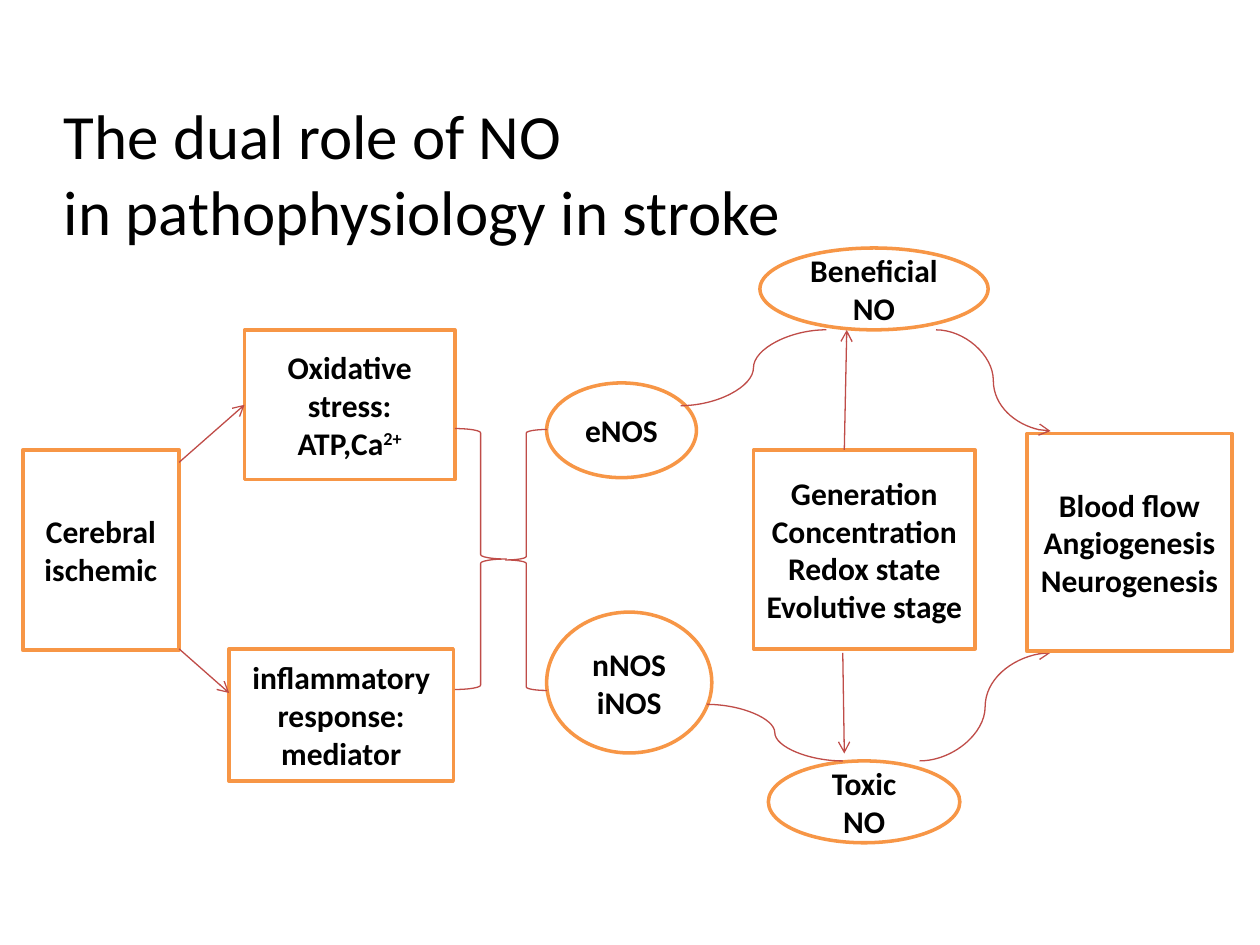
from dataclasses import dataclass
from typing import NamedTuple, Optional

from lxml.etree import SubElement
from pptx import Presentation
from pptx.dml.color import RGBColor
from pptx.enum.shapes import MSO_CONNECTOR, MSO_SHAPE
from pptx.enum.text import MSO_ANCHOR, PP_ALIGN
from pptx.oxml.ns import qn
from pptx.util import Cm, Pt


@dataclass(frozen=True)
class Theme:
    font: str = "Calibri"
    ink: RGBColor = RGBColor(0x00, 0x00, 0x00)
    paper: RGBColor = RGBColor(0xFF, 0xFF, 0xFF)
    border: RGBColor = RGBColor(0xF7, 0x96, 0x46)
    link: RGBColor = RGBColor(0xBF, 0x4C, 0x48)
    title_size: Pt = Pt(36)
    node_size: Pt = Pt(18)
    border_width: Pt = Pt(2)
    link_width: Pt = Pt(0.75)


class Area(NamedTuple):
    left: float
    top: float
    width: float
    height: float

    def lengths(self) -> list:
        return [Cm(value) for value in self]


class Node(NamedTuple):
    name: str
    kind: MSO_SHAPE
    area: Area
    lines: tuple
    superscript: str = ""


class Link(NamedTuple):
    start: tuple
    end: tuple
    curved: bool = False
    arrow: bool = True
    target: Optional[str] = None


THEME = Theme()
RECTANGLE, OVAL = MSO_SHAPE.RECTANGLE, MSO_SHAPE.OVAL

TITLE_AREA = Area(1.04, 2.51, 24.33, 1.93)
TITLE_LINES = ("The dual role of NO", "in pathophysiology in stroke")

NODES = (
    Node("inducible", OVAL, Area(11.02, 12.34, 3.33, 2.84), ("nNOS", "iNOS")),
    Node("conditions", RECTANGLE, Area(15.19, 9.07, 4.47, 4.01),
         ("Generation", "Concentration", "Redox state", "Evolutive stage")),
    Node("inflammation", RECTANGLE, Area(4.62, 13.08, 4.52, 2.67),
         ("inflammatory response:", "mediator")),
    Node("toxic", OVAL, Area(15.49, 15.34, 3.86, 1.65), ("Toxic NO",)),
    Node("beneficial", OVAL, Area(15.32, 5, 4.6, 1.65), ("Beneficial NO",)),
    Node("outcome", RECTANGLE, Area(20.7, 8.74, 4.14, 4.39),
         ("Blood flow", "Angiogenesis", "Neurogenesis")),
    Node("ischemia", RECTANGLE, Area(0.46, 9.07, 3.15, 4.04), ("Cerebral ischemic",)),
    Node("oxidation", RECTANGLE, Area(4.93, 6.65, 4.24, 3.02),
         ("Oxidative stress:", "ATP,Ca"), "2+"),
    Node("endothelial", OVAL, Area(11.02, 7.72, 3.02, 1.91), ("eNOS",)),
)

BRACES = (
    (MSO_SHAPE.RIGHT_BRACE, Area(9.17, 8.64, 1.04, 5.26)),
    (MSO_SHAPE.LEFT_BRACE, Area(10.19, 8.66, 0.84, 5.26)),
)

LINKS_BEHIND = (Link((18.54, 15.34), (21.18, 13.16), curved=True),)
LINKS_IN_FRONT = (
    Link((3.61, 13.08), (4.62, 13.97)),
    Link((3.61, 9.32), (4.93, 8.16), target="oxidation"),
    Link((14.25, 14.2), (16.99, 15.34), curved=True, arrow=False),
    Link((13.72, 8.18), (16.66, 6.65), curved=True, arrow=False),
    Link((18.87, 6.65), (21.18, 8.69), curved=True),
    Link((17.02, 9.07), (17.07, 6.65)),
    Link((16.99, 13.16), (17.02, 15.19)),
)


def add_span(para, text: str, size: Pt, bold: bool = False):
    """Append one styled run to a paragraph."""
    span = para.add_run()
    span.text = text
    span.font.name = THEME.font
    span.font.size = size
    span.font.bold = bold
    span.font.color.rgb = THEME.ink
    return span


def style_line(line, color: RGBColor, width: Pt) -> None:
    """Set the colour and width of a line."""
    line.color.rgb = color
    line.width = width


def add_title(page) -> None:
    """Write the two-line heading."""
    box = page.shapes.add_textbox(*TITLE_AREA.lengths())
    frame = box.text_frame
    frame.word_wrap = True
    frame.vertical_anchor = MSO_ANCHOR.MIDDLE
    para = frame.paragraphs[0]
    for index, text in enumerate(TITLE_LINES):
        if index:
            para.add_line_break()
        add_span(para, text, THEME.title_size)


def add_node(page, node: Node):
    """Draw one outlined box or ellipse with centred bold text."""
    box = page.shapes.add_shape(node.kind, *node.area.lengths())
    box.shadow.inherit = False
    box.fill.solid()
    box.fill.fore_color.rgb = THEME.paper
    style_line(box.line, THEME.border, THEME.border_width)
    frame = box.text_frame
    frame.word_wrap = True
    frame.vertical_anchor = MSO_ANCHOR.MIDDLE
    if node.kind == RECTANGLE:
        frame.margin_left = frame.margin_right = Cm(0.15)
    for index, text in enumerate(node.lines):
        para = frame.add_paragraph() if index else frame.paragraphs[0]
        para.alignment = PP_ALIGN.CENTER
        add_span(para, text, THEME.node_size, bold=True)
    if node.superscript:
        span = add_span(para, node.superscript, THEME.node_size, bold=True)
        span.font._element.set("baseline", "30000")
    return box


def add_brace(page, kind: MSO_SHAPE, area: Area) -> None:
    """Draw one unfilled brace."""
    brace = page.shapes.add_shape(kind, *area.lengths())
    brace.shadow.inherit = False
    brace.fill.background()
    style_line(brace.line, THEME.link, THEME.link_width)


def add_link(page, link: Link, boxes: dict) -> None:
    """Draw one straight or curved connector."""
    kind = MSO_CONNECTOR.CURVE if link.curved else MSO_CONNECTOR.STRAIGHT
    ends = [Cm(value) for value in link.start + link.end]
    connector = page.shapes.add_connector(kind, *ends)
    if link.target:
        connector.end_connect(boxes[link.target], 1)
    style_line(connector.line, THEME.link, THEME.link_width)
    if link.arrow:
        SubElement(connector.line._get_or_add_ln(), qn("a:tailEnd"), type="arrow")
    SubElement(connector._element.spPr, qn("a:effectLst"))


def main() -> None:
    """Build and save the deck."""
    deck = Presentation()
    deck.slide_width, deck.slide_height = Cm(25.4), Cm(19.05)
    page = deck.slides.add_slide(deck.slide_layouts[6])
    add_title(page)
    for link in LINKS_BEHIND:
        add_link(page, link, {})
    boxes = {node.name: add_node(page, node) for node in NODES}
    for kind, area in BRACES:
        add_brace(page, kind, area)
    for link in LINKS_IN_FRONT:
        add_link(page, link, boxes)
    deck.save("out.pptx")


if __name__ == "__main__":
    main()
